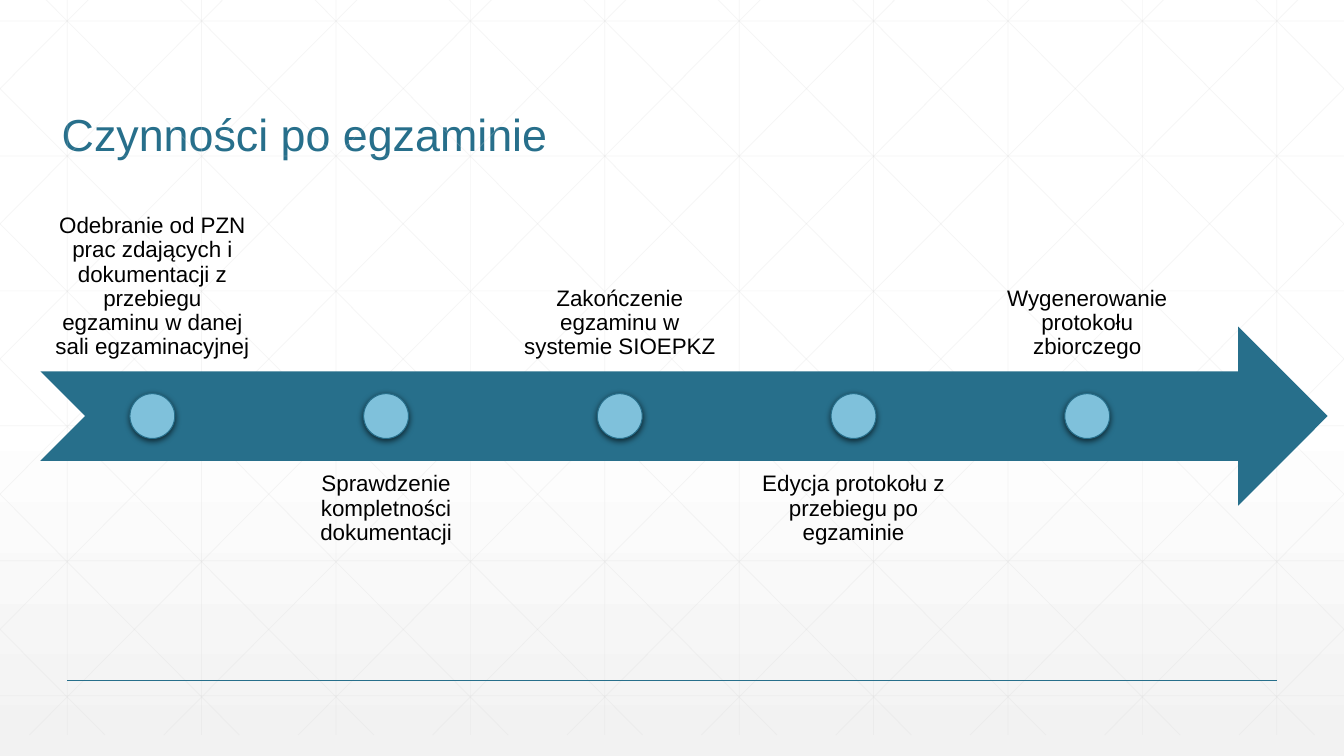
"""Build a slide with an arrow timeline of the steps after an exam."""
from dataclasses import dataclass
from typing import Any

from lxml.etree import SubElement
from pptx import Presentation
from pptx.dml.color import RGBColor
from pptx.enum.shapes import MSO_CONNECTOR as Connector, MSO_SHAPE as Preset
from pptx.enum.text import MSO_ANCHOR as Anchor, PP_ALIGN as Align
from pptx.oxml.ns import qn
from pptx.util import Cm, Pt

WIDTH, HEIGHT = 33.87, 19.05
PITCH = WIDTH / 10
GRID_TOP, GRID_BOTTOM = -0.53, 18.52
SLANT_RUN, SLANT_START = 18.94, 0.64
TEAL, SKY, GREY = "276F8B", "7FC1DB", "D9D9D9"
STEP_LEFT, STEP_PITCH = 3.84, 5.89
LABEL_WIDTH, LABEL_HEIGHT = 5.61, 4.51
DOT, DOT_TOP = 1.13, 9.92


@dataclass
class Step:
    text: str
    above: bool


@dataclass
class Stroke:
    x1: float
    y1: float
    x2: float
    y2: float


STEPS = [
    Step("Odebranie od PZN prac zdających i dokumentacji z przebiegu "
         "egzaminu w danej sali egzaminacyjnej", True),
    Step("Sprawdzenie kompletności dokumentacji", False),
    Step("Zakończenie egzaminu w systemie SIOEPKZ", True),
    Step("Edycja protokołu z przebiegu po egzaminie", False),
    Step("Wygenerowanie protokołu zbiorczego", True),
]


def hex_color(value: str) -> RGBColor:
    return RGBColor.from_string(value)


def apply(target: Any, values: dict[str, Any]) -> None:
    for name, value in values.items():
        setattr(target, name, value)


def fill_solid(fill: Any, color: str) -> None:
    fill.solid()
    fill.fore_color.rgb = hex_color(color)


def add_alpha(fill_element: Any, percent: int) -> None:
    color = fill_element.find(".//" + qn("a:srgbClr"))
    SubElement(color, qn("a:alpha"), val=str(percent * 1000))


def paint_background(page: Any) -> None:
    fill = page.background.fill
    fill.gradient()
    fill.gradient_angle = 270
    for stop, (position, color) in zip(fill.gradient_stops, [(0.53, "FFFFFF"), (1, "F2F2F2")]):
        stop.position = position
        stop.color.rgb = hex_color(color)


def draw_stroke(page: Any, stroke: Stroke, color: str, width: float, alpha: int = 100) -> None:
    ends = [Cm(value) for value in (stroke.x1, stroke.y1, stroke.x2, stroke.y2)]
    line = page.shapes.add_connector(Connector.STRAIGHT, *ends)
    line.line.width = Pt(width)
    fill_solid(line.line.fill, color)
    properties = line._element.spPr
    if alpha < 100:
        add_alpha(properties, alpha)
    SubElement(properties, qn("a:effectLst"))


def slanted(index: int) -> Stroke:
    """Return one falling diagonal, clipped to the page sides."""
    start = SLANT_START + PITCH * index
    left, right = max(start, 0), min(start + SLANT_RUN, WIDTH)
    slope = (GRID_BOTTOM - GRID_TOP) / SLANT_RUN
    return Stroke(left, GRID_TOP + (left - start) * slope,
                  right, GRID_TOP + (right - start) * slope)


def mirrored(stroke: Stroke) -> Stroke:
    return Stroke(WIDTH - stroke.x1, stroke.y1, WIDTH - stroke.x2, stroke.y2)


def grid_strokes() -> list[Stroke]:
    columns = [PITCH * (index + 0.5) for index in range(10)]
    rows = [0.53 + 3.4 * index for index in range(6)]
    falling = [slanted(index) for index in range(-5, 10)]
    return ([Stroke(x, GRID_TOP, x, GRID_BOTTOM) for x in columns]
            + [Stroke(0, y, WIDTH, y) for y in rows]
            + falling + [mirrored(stroke) for stroke in falling])


def write(box: Any, text: str, size: float, color: str, align: Any, frame: dict[str, Any]) -> None:
    apply(box.text_frame, {"word_wrap": True, **frame})
    para = box.text_frame.paragraphs[0]
    apply(para, {"alignment": align, "line_spacing": 0.9})
    span = para.add_run()
    span.text = text
    apply(span.font, {"size": Pt(size), "name": "Arial"})
    span.font.color.rgb = hex_color(color)


def draw_title(page: Any, text: str) -> None:
    title = page.shapes.title
    apply(title, {"left": Cm(1.3), "top": Cm(1.83), "width": Cm(27.94), "height": Cm(2.36)})
    write(title, text, 32, TEAL, Align.LEFT, {"vertical_anchor": Anchor.BOTTOM})


def draw_arrow(page: Any) -> None:
    arrow = page.shapes.add_shape(Preset.NOTCHED_RIGHT_ARROW, Cm(1.02), Cm(8.23), Cm(32.44), Cm(4.51))
    arrow.shadow.inherit = False
    fill_solid(arrow.fill, TEAL)
    arrow.line.fill.background()


def draw_dot(page: Any, center: float) -> None:
    dot = page.shapes.add_shape(Preset.OVAL, Cm(center - DOT / 2), Cm(DOT_TOP), Cm(DOT), Cm(DOT))
    dot.shadow.inherit = False
    fill_solid(dot.fill, SKY)
    fill_solid(dot.line.fill, TEAL)
    dot.line.width = Pt(0.75)
    effects = dot._element.spPr.find(qn("a:effectLst"))
    shadow = SubElement(effects, qn("a:outerShdw"), blurRad=str(Pt(4.5)), dist=str(Pt(1.5)),
                        dir="5400000", algn="ctr", rotWithShape="0")
    SubElement(shadow, qn("a:srgbClr"), val="000000")
    add_alpha(shadow, 63)


def draw_step(page: Any, step: Step, center: float) -> None:
    top = 4.86 if step.above else 11.6
    box = page.shapes.add_textbox(Cm(center - LABEL_WIDTH / 2), Cm(top),
                                  Cm(LABEL_WIDTH), Cm(LABEL_HEIGHT))
    sides = ("left", "right", "top", "bottom")
    frame = {f"margin_{side}": Cm(0.31) for side in sides}
    frame["vertical_anchor"] = Anchor.BOTTOM if step.above else Anchor.TOP
    write(box, step.text, 16, "000000", Align.CENTER, frame)
    draw_dot(page, center)


def main() -> None:
    deck = Presentation()
    apply(deck, {"slide_width": Cm(WIDTH), "slide_height": Cm(HEIGHT)})
    page = deck.slides.add_slide(deck.slide_layouts[5])
    paint_background(page)
    for stroke in grid_strokes():
        draw_stroke(page, stroke, GREY, 0.5, 25)
    draw_stroke(page, Stroke(PITCH / 2, 17.15, WIDTH - PITCH / 2, 17.15), TEAL, 1)
    draw_title(page, "Czynności po egzaminie")
    draw_arrow(page)
    for index, step in enumerate(STEPS):
        draw_step(page, step, STEP_LEFT + STEP_PITCH * index)
    deck.save("out.pptx")


if __name__ == "__main__":
    main()
